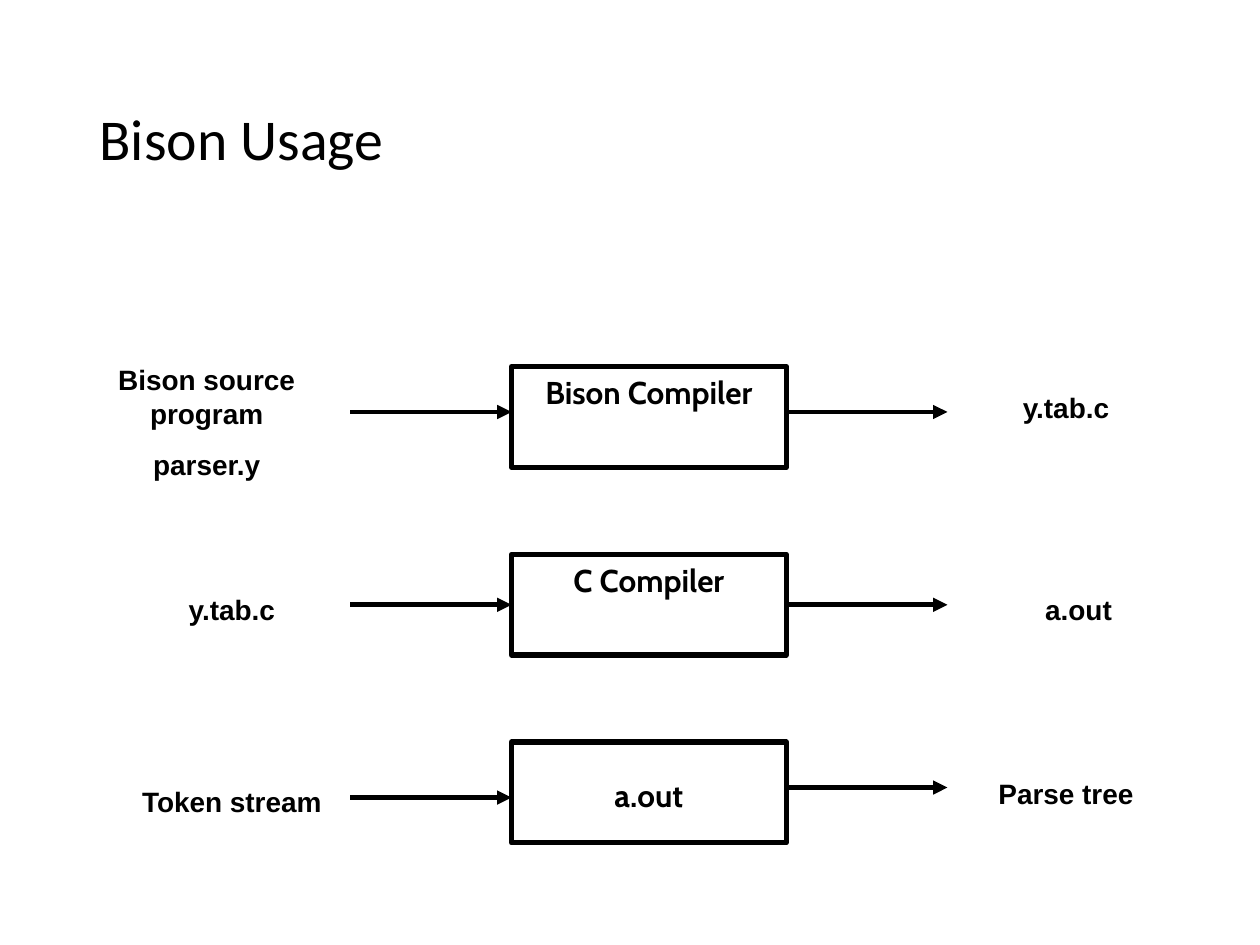
import pptx
import pptx.util
import pptx.dml.color
import pptx.enum.shapes
import pptx.enum.text
import pptx.oxml.ns
import lxml.etree

BLACK = pptx.dml.color.RGBColor(0, 0, 0)
WHITE = pptx.dml.color.RGBColor(255, 255, 255)
SCALE = 9144
LEFT, WIDE, TALL = 406, 218, 80
RIGHT = LEFT + WIDE
REACH = 128


def emu(*px):
    return [pptx.util.Emu(n * SCALE) for n in px]


class Deck:
    """Holds the style and the current slide and draws each kind of element."""

    def __init__(self):
        self.file = pptx.Presentation()
        self.file.slide_width, self.file.slide_height = emu(1000, 750)
        self.slide = self.file.slides.add_slide(self.file.slide_layouts[5])
        self.shapes = self.slide.shapes

    def style(self, par, font, size, bold):
        for run in par.runs:
            run.font.name = font
            run.font.size = pptx.util.Pt(size)
            run.font.bold = bold
            run.font.color.rgb = BLACK

    def title(self, text, *area):
        head = self.shapes.title
        head.left, head.top, head.width, head.height = emu(*area)
        frame = head.text_frame
        frame.text = text
        frame.vertical_anchor = pptx.enum.text.MSO_ANCHOR.MIDDLE
        par = frame.paragraphs[0]
        par.alignment = pptx.enum.text.PP_ALIGN.LEFT
        par.line_spacing = 0.9
        self.style(par, "Calibri", 33, False)

    def box(self, *area):
        kind = pptx.enum.shapes.MSO_SHAPE.RECTANGLE
        rect = self.shapes.add_shape(kind, *emu(*area))
        rect.shadow.inherit = False
        rect.fill.solid()
        rect.fill.fore_color.rgb = WHITE
        rect.line.color.rgb = BLACK
        rect.line.width = pptx.util.Pt(3)
        return rect

    def label(self, text, area, font="Arial", size=16, gap=10):
        frame = self.shapes.add_textbox(*emu(*area)).text_frame
        frame.word_wrap = True
        frame.auto_size = pptx.enum.text.MSO_AUTO_SIZE.SHAPE_TO_FIT_TEXT
        frame.text = text
        for par in frame.paragraphs:
            par.alignment = pptx.enum.text.PP_ALIGN.CENTER
            par.space_before = pptx.util.Pt(gap)
            self.style(par, font, size, True)

    def arrow(self, x, y):
        kind = pptx.enum.shapes.MSO_CONNECTOR.STRAIGHT
        line = self.shapes.add_connector(kind, *emu(x, y, x + REACH, y))
        line.line.color.rgb = BLACK
        line.line.width = pptx.util.Pt(2.75)
        name = pptx.oxml.ns.qn
        tail = lxml.etree.SubElement(line.line._get_or_add_ln(), name("a:tailEnd"))
        tail.set("type", "triangle")
        lxml.etree.SubElement(line._element.spPr, name("a:effectLst"))
        return line

    def stage(self, top, name, area, start, end):
        rect = self.box(LEFT, top, WIDE, TALL)
        self.label(name, area, "Cabin", 18, 15)
        entry = self.arrow(LEFT - REACH, start)
        leave = self.arrow(RIGHT, end)
        middle = top + TALL // 2
        if start == middle:
            entry.end_connect(rect, 1)
        if end == middle:
            leave.begin_connect(rect, 3)


def main():
    deck = Deck()
    deck.title("Bison Usage", 69, 40, 862, 145)
    deck.stage(291, "Bison Compiler", (416, 291, 198, 79), 327, 327)
    deck.stage(440, "C Compiler", (416, 440, 198, 29), 480, 480)
    deck.stage(589, "a.out", (416, 611, 198, 44), 633, 625)
    for text, area in (
        ("Bison source program\nparser.y", (50, 283, 228, 91)),
        ("y.tab.c", (752, 305, 188, 32)),
        ("y.tab.c", (90, 465, 188, 32)),
        ("a.out", (762, 465, 188, 32)),
        ("Token stream", (90, 618, 188, 55)),
        ("Parse tree", (752, 611, 188, 32)),
    ):
        deck.label(text, area)
    deck.file.save("out.pptx")


if __name__ == "__main__":
    main()
